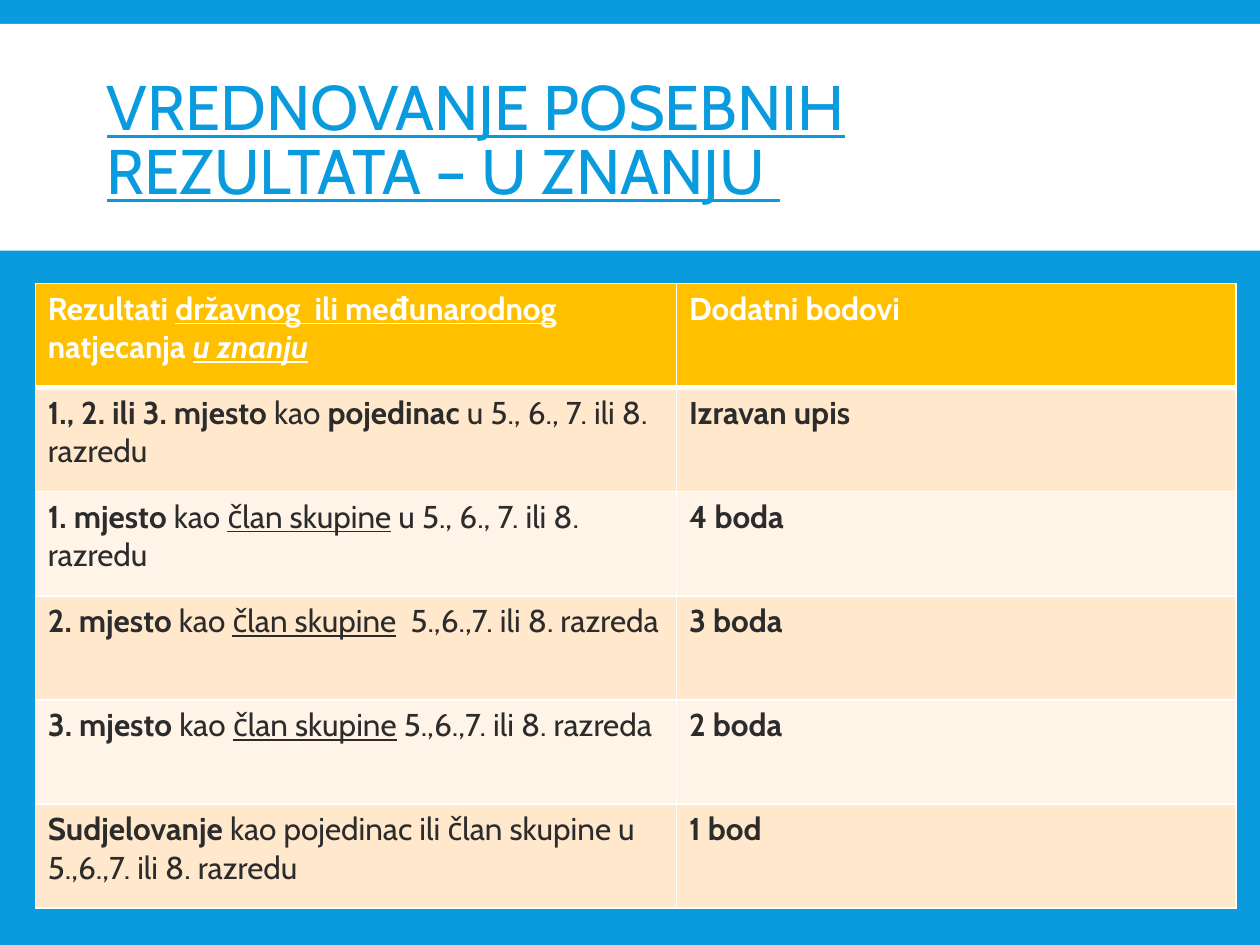
from lxml import etree
from pptx import Presentation
from pptx.dml.color import RGBColor
from pptx.enum.shapes import MSO_SHAPE
from pptx.enum.text import MSO_ANCHOR
from pptx.oxml.ns import qn
from pptx.util import Inches, Pt

RECTANGLE = MSO_SHAPE.RECTANGLE
MIDDLE = MSO_ANCHOR.MIDDLE

BLUE = RGBColor(0x09, 0x9B, 0xDD)
WHITE = RGBColor(0xFF, 0xFF, 0xFF)
GOLD = RGBColor(0xFF, 0xC0, 0x00)
PEACH = RGBColor(0xFF, 0xE8, 0xCC)
CREAM = RGBColor(0xFF, 0xF4, 0xE7)
DARK = RGBColor(0x2C, 0x2C, 0x2C)
FONT = "Cabin"

PLAIN = {"bold": False}
BOLD = {"bold": True}
UNDERLINED = {"bold": False, "underline": True}
BOLD_UNDERLINED = {"bold": True, "underline": True}
BOLD_ITALIC_UNDERLINED = {"bold": True, "italic": True, "underline": True}

TITLE = "VREDNOVANJE POSEBNIH REZULTATA – U ZNANJU "
HEADER = (
    [("Rezultati ", BOLD), ("državnog  ili međunarodnog", BOLD_UNDERLINED),
     (" natjecanja ", BOLD), ("u znanju", BOLD_ITALIC_UNDERLINED)],
    "Dodatni bodovi",
)


def group_member(place, grades):
    return [(place, BOLD), ("kao ", PLAIN), ("član skupine", UNDERLINED), (grades, PLAIN)]


RESULTS = [
    ([("1., 2. ili 3. mjesto ", BOLD), ("kao ", PLAIN), ("pojedinac ", BOLD),
      ("u 5., 6., 7. ili 8. razredu", PLAIN)], "Izravan upis"),
    (group_member("1. mjesto ", " u 5., 6., 7. ili 8. razredu"), "4 boda"),
    (group_member("2. mjesto ", "  5.,6.,7. ili 8. razreda"), "3 boda"),
    (group_member("3. mjesto ", " 5.,6.,7. ili 8. razreda"), "2 boda"),
    ([("Sudjelovanje ", BOLD),
      ("kao pojedinac ili član skupine u 5.,6.,7. ili 8. razredu", PLAIN)], "1 bod"),
]


def add_run(paragraph, text, size, color, style):
    run = paragraph.add_run()
    run.text = text
    for name, value in {"name": FONT, "size": Pt(size), **style}.items():
        setattr(run.font, name, value)
    run.font.color.rgb = color


def set_borders(cell, widths):
    """Draw white borders; widths maps the sides L, R, T and B to points."""
    properties = cell._tc.get_or_add_tcPr()
    for index, (side, width) in enumerate(widths.items()):
        line = etree.Element(qn(f"a:ln{side}"), w=str(Pt(width)))
        fill = etree.SubElement(line, qn("a:solidFill"))
        etree.SubElement(fill, qn("a:srgbClr"), val=str(WHITE))
        properties.insert(index, line)


def fill_cell(cell, runs, fill, color, widths):
    cell.fill.solid()
    cell.fill.fore_color.rgb = fill
    set_borders(cell, widths)
    for text, style in runs:
        add_run(cell.text_frame.paragraphs[0], text, 18, color, style)


def add_title_band(slide, left, top, width, height):
    band = slide.shapes.add_shape(RECTANGLE, left, top, width, height)
    band.shadow.inherit = False
    band.fill.solid()
    band.fill.fore_color.rgb = WHITE
    band.line.fill.background()

    margin = Inches(0.75)
    title = slide.shapes.add_textbox(
        left + margin, top + Inches(0.12), width - 2 * margin, Inches(1.65))
    frame = title.text_frame
    frame.word_wrap = True
    frame.vertical_anchor = MIDDLE
    paragraph = frame.paragraphs[0]
    paragraph.line_spacing = 0.85
    add_run(paragraph, TITLE, 36, BLUE, {"underline": True})


def add_points_table(slide, left, top, width, height):
    rows = [HEADER, *RESULTS]
    table = slide.shapes.add_table(len(rows), 2, left, top, width, height).table
    table.columns[0].width = Inches(5.09)
    table.columns[1].width = width - Inches(5.09)

    for index, (result, points) in enumerate(rows):
        is_header = index == 0
        fill = GOLD if is_header else (CREAM, PEACH)[index % 2]
        color = WHITE if is_header else DARK
        widths = {"L": 1, "R": 1, "T": 3 if index == 1 else 1, "B": 3 if is_header else 1}
        for column, runs in enumerate((result, [(points, BOLD)])):
            fill_cell(table.cell(index, column), runs, fill, color, widths)


def main():
    presentation = Presentation()
    presentation.slide_width = Inches(10)
    presentation.slide_height = Inches(7.5)
    slide = presentation.slides.add_slide(presentation.slide_layouts[6])
    slide.background.fill.solid()
    slide.background.fill.fore_color.rgb = BLUE
    add_title_band(slide, Inches(0), Inches(0.19), Inches(10), Inches(1.8))
    add_points_table(slide, Inches(0.28), Inches(2.25), Inches(9.53), Inches(4.96))
    presentation.save("out.pptx")


if __name__ == "__main__":
    main()
